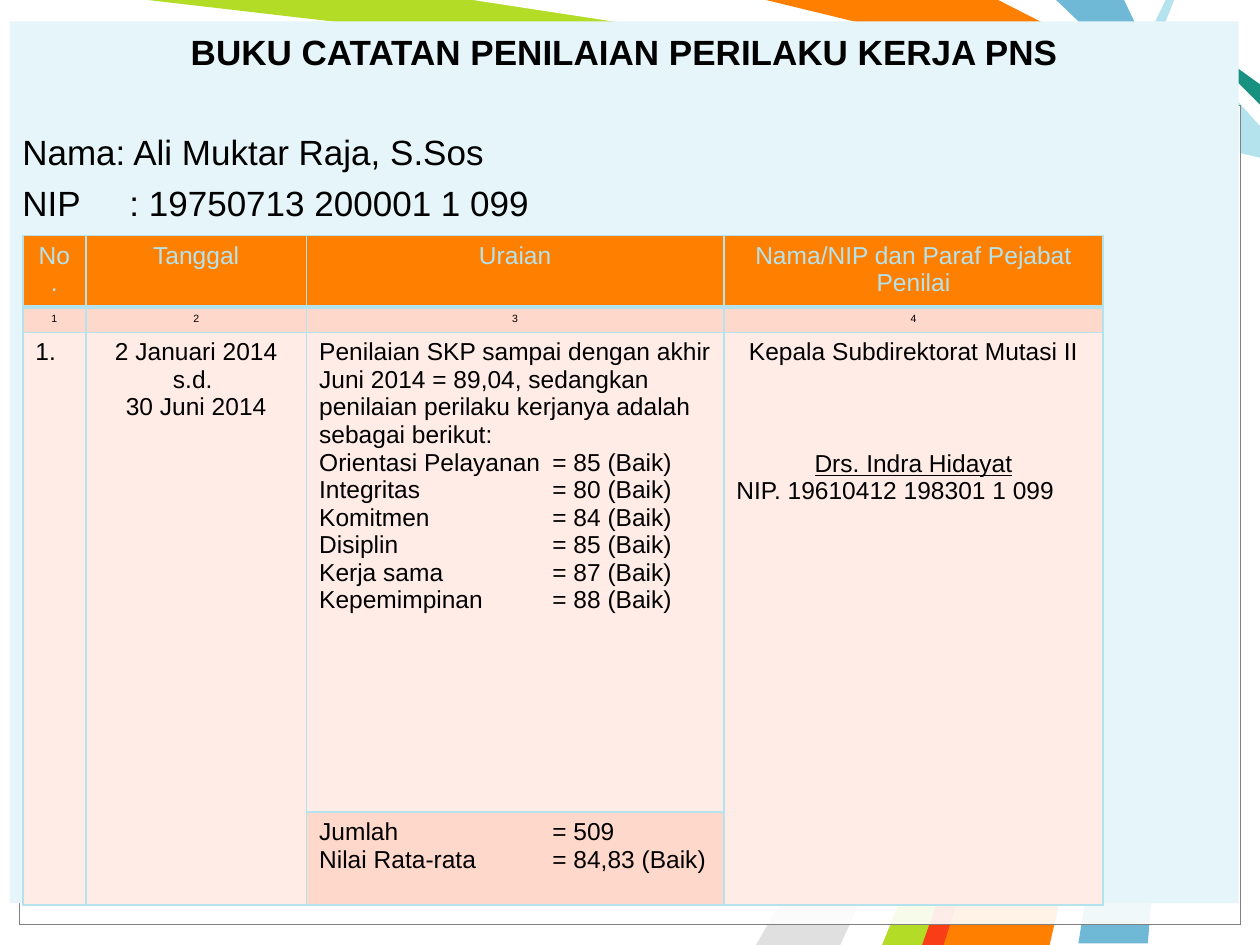
from lxml import etree
from pptx import Presentation
from pptx.dml.color import RGBColor
from pptx.enum.shapes import MSO_SHAPE as Shape
from pptx.enum.text import MSO_ANCHOR as Anchor, PP_ALIGN as Align
from pptx.oxml.ns import qn
from pptx.util import Cm, Pt

BLACK = RGBColor(0x00, 0x00, 0x00)
WHITE = RGBColor(0xFF, 0xFF, 0xFF)
GRAY = RGBColor(0x80, 0x80, 0x80)
SILVER = RGBColor(0xE0, 0xE0, 0xE0)
BLUE = RGBColor(0x6F, 0xB9, 0xD7)
SKY = RGBColor(0xB4, 0xE3, 0xEE)
ICE = RGBColor(0xE6, 0xF5, 0xF9)
LIME = RGBColor(0xB3, 0xDC, 0x27)
TEAL = RGBColor(0x18, 0x91, 0x80)
ORANGE = RGBColor(0xFF, 0x7F, 0x00)
RED = RGBColor(0xF9, 0x3D, 0x17)
PEACH = RGBColor(0xFF, 0xD8, 0xCC)
BLUSH = RGBColor(0xFF, 0xEC, 0xE7)

RIBBONS = [
    (BLUE, [(22.66, 0), (23.6, 1.96), (24.33, 4.24), (23.14, 19.02), (21.74, 19.02),
            (24.13, 4.24), (23.29, 1.91), (21.29, 0)]),
    (LIME, [(2.97, 0), (9.73, 0), (23.22, 1.98), (23.93, 4.29), (18.85, 19.05),
            (17.58, 19.05), (23.75, 4.39), (22.89, 2.31)]),
    (SILVER, [(16.94, 19.05), (23.55, 4.6), (15.24, 19.05)]),
    (WHITE, [(9.53, 0), (23.11, 2.08), (23.67, 4.11), (17.15, 19.05), (17.78, 19.05),
             (23.9, 4.01), (23.29, 1.91), (15.24, 0)]),
    (SKY, [(23.5, 0), (23.29, 0.43), (24.84, 3.05), (25.4, 3.18), (25.4, 2.54),
           (23.5, 0.43), (23.67, 0)]),
    (TEAL, [(25.4, 2.11), (23.93, 0.64), (25.4, 1.7)]),
    (ORANGE, [(15.44, 0), (20.12, 0), (23.62, 1.78), (24.54, 4.29), (21.16, 19.05),
              (18.62, 19.05), (23.93, 4.01), (23.29, 1.91)]),
    (RED, [(18.59, 19.05), (23.67, 4.65), (19.02, 19.05)]),
]
SCORES = ["Orientasi Pelayanan\t= 85 (Baik)", "Integritas\t= 80 (Baik)",
          "Komitmen\t= 84 (Baik)", "Disiplin\t= 85 (Baik)",
          "Kerja sama\t= 87 (Baik)", "Kepemimpinan\t= 88 (Baik)"]
INTRO = ("Penilaian SKP sampai dengan akhir Juni 2014 = 89,04, sedangkan "
         "penilaian perilaku kerjanya adalah sebagai berikut:")


class Painter:
    font = "Arial"
    border = SKY

    def __init__(self, page):
        self.page = page

    def ribbon(self, color, points):
        start, *rest = [(Cm(x), Cm(y)) for x, y in points]
        builder = self.page.shapes.build_freeform(*start)
        builder.add_line_segments(rest, close=True)
        shape = builder.convert_to_shape()
        shape.shadow.inherit = False
        shape.fill.solid()
        shape.fill.fore_color.rgb = color
        shape.line.fill.background()

    def veil(self, left, top, width, height, line, opacity):
        shape = self.page.shapes.add_shape(
            Shape.RECTANGLE, Cm(left), Cm(top), Cm(width), Cm(height))
        shape.shadow.inherit = False
        shape.fill.solid()
        shape.fill.fore_color.rgb = WHITE
        color = shape._element.spPr.find(qn("a:solidFill"))[0]
        etree.SubElement(color, qn("a:alpha"), val=str(opacity * 1000))
        shape.line.color.rgb = line
        shape.line.width = Pt(0.75)

    def panel(self, left, top, width, height, fill):
        box = self.page.shapes.add_textbox(Cm(left), Cm(top), Cm(width), Cm(height))
        box.fill.solid()
        box.fill.fore_color.rgb = fill
        frame = box.text_frame
        frame.word_wrap = True
        frame.vertical_anchor = Anchor.TOP
        frame.margin_top = Cm(0.19)
        return frame

    def text(self, frame, lines, size, align=Align.LEFT, color=BLACK, tab=None):
        for index, line in enumerate(lines):
            words, style = line if isinstance(line, tuple) else (line, {})
            para = frame.paragraphs[0] if index == 0 else frame.add_paragraph()
            para.text = words
            para.alignment = style.get("align", align)
            if "before" in style:
                para.space_before = Pt(style["before"])
            if tab and "\t" in words:
                tabs = etree.SubElement(para._p.get_or_add_pPr(), qn("a:tabLst"))
                etree.SubElement(tabs, qn("a:tab"), pos=str(Cm(tab)), algn="l")
            para.font.name = self.font
            para.font.size = Pt(size)
            para.font.color.rgb = color
            para.font.bold = style.get("bold", False)
            para.font.underline = style.get("underline", False)

    def table(self, left, top, columns, rows):
        frame = self.page.shapes.add_table(
            len(rows), len(columns), Cm(left), Cm(top), Cm(sum(columns)), Cm(sum(rows)))
        table = frame.table
        table.first_row = table.horz_banding = False
        for column, width in zip(table.columns, columns):
            column.width = Cm(width)
        for row, height in zip(table.rows, rows):
            row.height = Cm(height)
        return table

    def cell(self, cell, fill, bottom=1):
        properties = cell._tc.get_or_add_tcPr()
        for side, width in zip("LRTB", (1, 1, 1, bottom)):
            edge = etree.SubElement(properties, qn(f"a:ln{side}"), w=str(Pt(width)))
            solid = etree.SubElement(edge, qn("a:solidFill"))
            etree.SubElement(solid, qn("a:srgbClr"), val=str(self.border))
        cell.fill.solid()
        cell.fill.fore_color.rgb = fill


def main():
    deck = Presentation()
    deck.slide_width, deck.slide_height = Cm(25.4), Cm(19.05)
    painter = Painter(deck.slides.add_slide(deck.slide_layouts[6]))

    for color, points in RIBBONS:
        painter.ribbon(color, points)
    for line in (BLACK, GRAY):
        painter.veil(0.4, 2.13, 24.61, 16.51, line, 69)

    heading = painter.panel(0.2, 0.43, 24.77, 17.78, ICE)
    painter.text(heading, [
        ("BUKU CATATAN PENILAIAN PERILAKU KERJA PNS",
         {"align": Align.CENTER, "bold": True}),
        ("Nama: Ali Muktar Raja, S.Sos", {"before": 33}),
        ("NIP\t: 19750713 200001 1 099", {"before": 5}),
    ], 20, tab=2.16)

    table = painter.table(0.46, 4.75, [1.27, 4.45, 8.41, 7.65], [1.37, 0.49, 9.67, 1.87])
    for row, fill in enumerate((ORANGE, PEACH, BLUSH, PEACH)):
        for column in range(4):
            shade = BLUSH if row == 3 and column != 2 else fill
            painter.cell(table.cell(row, column), shade, bottom=3 if row == 0 else 1)
    for column in (0, 1, 3):
        table.cell(2, column).merge(table.cell(3, column))

    titles = ["No.", "Tanggal", "Uraian", "Nama/NIP dan Paraf Pejabat Penilai"]
    for column, title in enumerate(titles):
        painter.text(table.cell(0, column).text_frame, [title], 14, Align.CENTER, SKY)
        painter.text(table.cell(1, column).text_frame, [str(column + 1)], 6, Align.CENTER)

    painter.text(table.cell(2, 0).text_frame, ["1."], 14)
    painter.text(table.cell(2, 1).text_frame,
                 ["2 Januari 2014 s.d. ", "30 Juni 2014"], 14, Align.CENTER)
    painter.text(table.cell(2, 2).text_frame, [INTRO, *SCORES], 14, tab=4.7)
    painter.text(table.cell(2, 3).text_frame, [
        "Kepala Subdirektorat Mutasi II",
        ("Drs. Indra Hidayat", {"before": 48, "underline": True}),
        ("NIP. 19610412 198301 1 099", {"align": Align.LEFT}),
    ], 14, Align.CENTER)
    painter.text(table.cell(3, 2).text_frame,
                 ["Jumlah\t= 509", "Nilai Rata-rata\t= 84,83 (Baik)"], 14, tab=4.7)

    deck.save("out.pptx")


if __name__ == "__main__":
    main()
